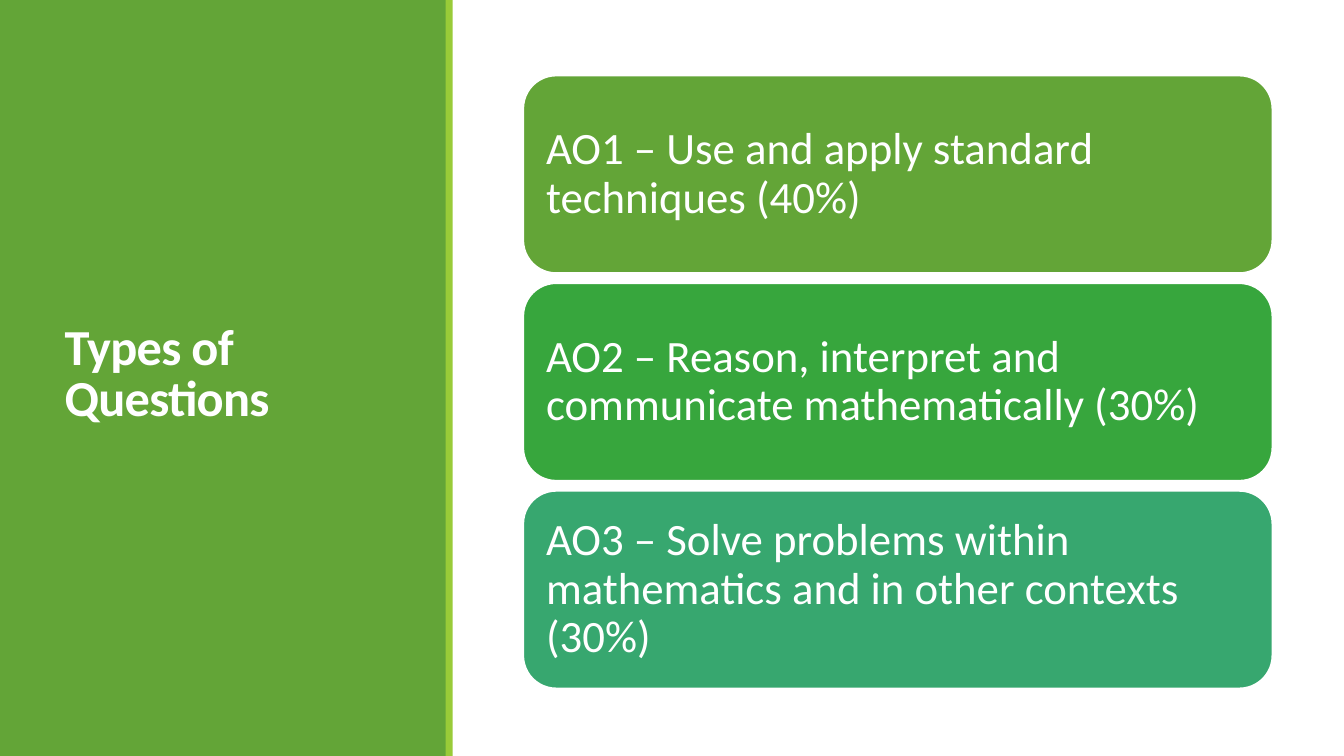
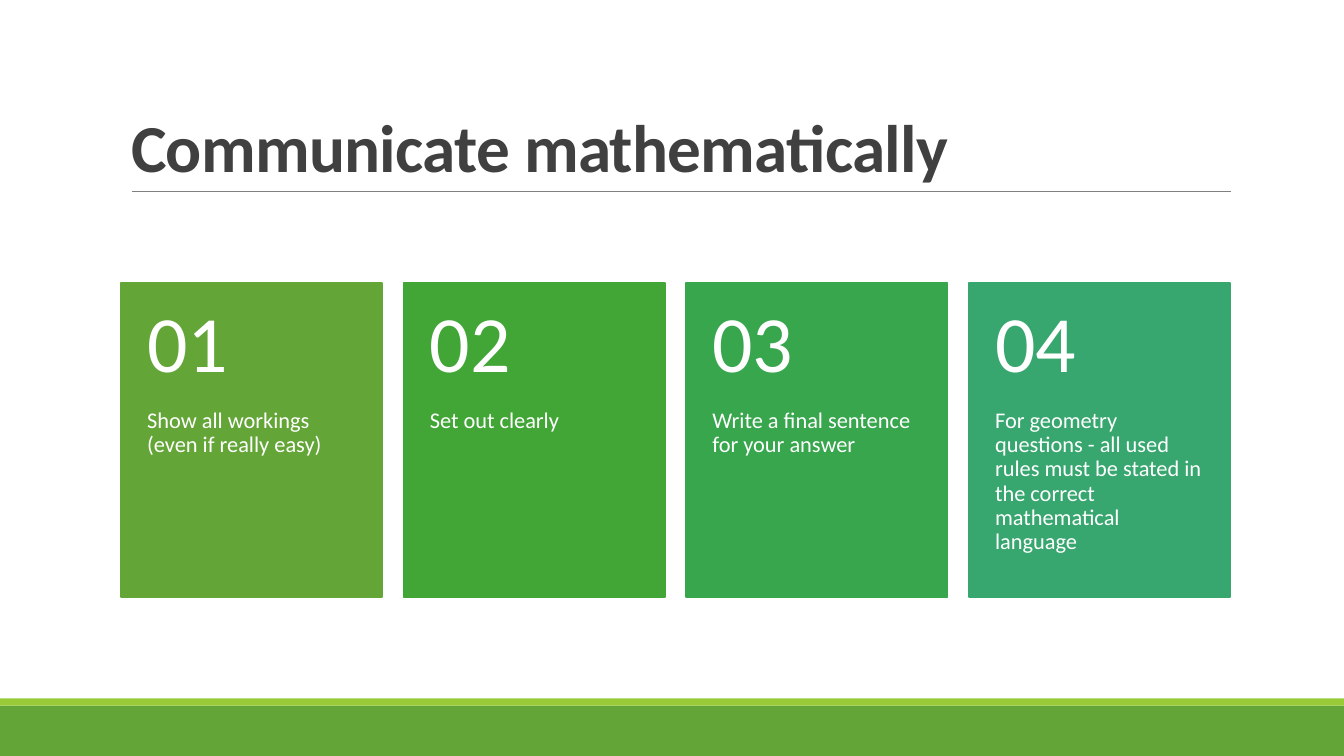
from lxml import etree
from pptx import Presentation
from pptx.dml.color import RGBColor
from pptx.enum.shapes import MSO_CONNECTOR, MSO_SHAPE
from pptx.enum.text import MSO_ANCHOR, MSO_AUTO_SIZE, PP_ALIGN
from pptx.oxml.ns import qn
from pptx.util import Inches, Pt

FONT = "Calibri"
WHITE = RGBColor(0xFF, 0xFF, 0xFF)
DARK_GREY = RGBColor(0x40, 0x40, 0x40)
RULE_GREY = RGBColor(0x80, 0x80, 0x80)
GREEN = RGBColor(0x63, 0xA5, 0x37)
LIME = RGBColor(0x99, 0xCB, 0x38)
LEAF = RGBColor(0x42, 0xA6, 0x37)
MID_GREEN = RGBColor(0x37, 0xA6, 0x3D)
EMERALD = RGBColor(0x37, 0xA6, 0x4D)
TEAL = RGBColor(0x37, 0xA7, 0x6F)

SLIDE_WIDTH, SLIDE_HEIGHT = 13.33, 7.5
STRIPE = 0.07

OBJECTIVES = [
    ("AO1 – Use and apply standard techniques (40%)", GREEN),
    ("AO2 – Reason, interpret and communicate mathematically (30%)", MID_GREEN),
    ("AO3 – Solve problems within mathematics and in other contexts (30%)", TEAL),
]
ADVICE = [
    ("Show all workings (even if really easy)", GREEN),
    ("Set out clearly", LEAF),
    ("Write a final sentence for your answer", EMERALD),
    ("For geometry questions - all used rules must be stated in the correct "
     "mathematical language", TEAL),
]


def write(shape, text, size, color=WHITE, anchor=MSO_ANCHOR.MIDDLE,
          insets=(0.1, 0.05, 0.1, 0.05), line_spacing=0.9):
    """Fill a shape with one left-aligned paragraph; insets are left, top, right, bottom."""
    frame = shape.text_frame
    frame.text = text
    frame.word_wrap = True
    frame.auto_size = MSO_AUTO_SIZE.NONE
    frame.vertical_anchor = anchor
    (frame.margin_left, frame.margin_top,
     frame.margin_right, frame.margin_bottom) = map(Inches, insets)
    paragraph = frame.paragraphs[0]
    paragraph.alignment = PP_ALIGN.LEFT
    paragraph.line_spacing = line_spacing
    run = paragraph.runs[0]
    run.font.name = FONT
    run.font.size = Pt(size)
    run.font.color.rgb = color
    return run


def add_box(slide, box, fill, line=None, kind=MSO_SHAPE.RECTANGLE):
    shape = slide.shapes.add_shape(kind, *map(Inches, box))
    shape.shadow.inherit = False
    shape.fill.solid()
    shape.fill.fore_color.rgb = fill
    if line is None:
        shape.line.fill.background()
    else:
        shape.line.color.rgb = line
        shape.line.width = Pt(1.25)
    return shape


def add_text(slide, box, text, size, **style):
    write(slide.shapes.add_textbox(*map(Inches, box)), text, size, **style)


def add_rule(slide, left, right, top):
    rule = slide.shapes.add_connector(
        MSO_CONNECTOR.STRAIGHT, *map(Inches, (left, top, right, top)))
    rule.line.color.rgb = RULE_GREY
    rule.line.width = Pt(0.5)
    etree.SubElement(rule._element.spPr, qn("a:effectLst"))


def add_slide(presentation, title, title_box, size, color, anchor, band, stripe):
    """Add a slide with a green band, its lime stripe and a bold title in front."""
    slide = presentation.slides.add_slide(presentation.slide_layouts[5])
    add_box(slide, band, GREEN)
    add_box(slide, stripe, LIME)
    placeholder = slide.shapes.title
    placeholder.left, placeholder.top, placeholder.width, placeholder.height = map(
        Inches, title_box)
    run = write(placeholder, title, size, color, anchor, line_spacing=0.85)
    run.font.bold = True
    run._r.get_or_add_rPr().set("spc", "-50")
    slide.shapes._spTree.append(placeholder._element)
    return slide


def add_question_types(presentation):
    slide = add_slide(
        presentation, "Types of Questions", (0.54, 0.57, 3.37, 6.31), 36, WHITE,
        MSO_ANCHOR.MIDDLE, band=(0, 0, 4.43, SLIDE_HEIGHT),
        stripe=(4.42, 0, STRIPE, SLIDE_HEIGHT))
    for index, (text, color) in enumerate(OBJECTIVES):
        box = (5.19, 0.75 + index * 2.06, 7.43, 1.96)
        bar = add_box(slide, box, color, WHITE, MSO_SHAPE.ROUNDED_RECTANGLE)
        write(bar, text, 32, insets=(0.13,) * 4)


def add_communication(presentation):
    left, width, top = 1.2, 11, 2.81
    card_width, card_height, number_height = 2.59, 3.11, 1.25
    pitch = (width - card_width) / (len(ADVICE) - 1)
    band_top = 7
    slide = add_slide(
        presentation, "Communicate mathematically", (left, 0.31, width, 1.59), 48,
        DARK_GREY, MSO_ANCHOR.BOTTOM,
        band=(0, band_top, SLIDE_WIDTH, SLIDE_HEIGHT - band_top),
        stripe=(0, band_top - STRIPE, SLIDE_WIDTH, STRIPE))
    add_rule(slide, 1.31, 12.21, 1.9)
    for index, (text, color) in enumerate(ADVICE):
        x = left + index * pitch
        add_box(slide, (x, top, card_width, card_height), color, color)
        add_text(slide, (x, top, card_width, number_height), f"{index + 1:02}", 57,
                 insets=(0.26, 0.18, 0.26, 0.18))
        add_text(slide, (x, top + number_height, card_width, card_height - number_height),
                 text, 16, anchor=MSO_ANCHOR.TOP, insets=(0.26, 0, 0.26, 0.36))


def main():
    presentation = Presentation()
    presentation.slide_width = Inches(SLIDE_WIDTH)
    presentation.slide_height = Inches(SLIDE_HEIGHT)
    add_question_types(presentation)
    add_communication(presentation)
    presentation.save("out.pptx")


if __name__ == "__main__":
    main()
